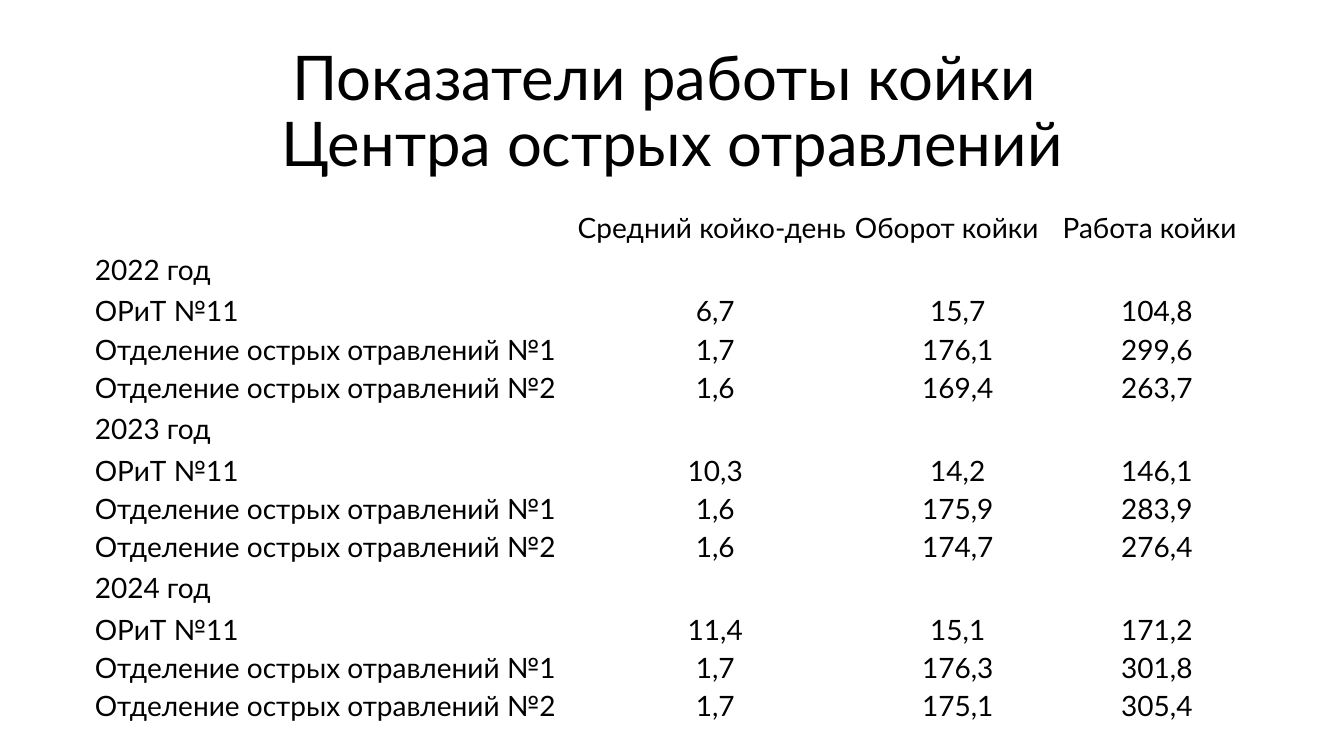
import pptx
import pptx.dml.color
import pptx.enum.text
import pptx.util

Inches = pptx.util.Inches
Pt = pptx.util.Pt
PP_ALIGN = pptx.enum.text.PP_ALIGN
MIDDLE = pptx.enum.text.MSO_ANCHOR.MIDDLE
BLACK = pptx.dml.color.RGBColor(0x00, 0x00, 0x00)
WHITE = pptx.dml.color.RGBColor(0xFF, 0xFF, 0xFF)
FONT = "Lato"

TITLE = "Показатели работы койки \vЦентра острых отравлений"
HEADERS = ["", "Средний койко-день", "Оборот койки", "Работа койки"]
DEPARTMENTS = [
    "ОРиТ №11",
    "Отделение острых отравлений №1",
    "Отделение острых отравлений №2",
]
YEARS = {
    "2022 год": [
        ("6,7", "15,7", "104,8"),
        ("1,7", "176,1", "299,6"),
        ("1,6", "169,4", "263,7"),
    ],
    "2023 год": [
        ("10,3", "14,2", "146,1"),
        ("1,6", "175,9", "283,9"),
        ("1,6", "174,7", "276,4"),
    ],
    "2024 год": [
        ("11,4", "15,1", "171,2"),
        ("1,7", "176,3", "301,8"),
        ("1,7", "175,1", "305,4"),
    ],
}
COLUMN_WIDTHS = [4.79, 2.75, 2.06, 1.89]
HEADER_HEIGHT, YEAR_HEIGHT, DEPARTMENT_HEIGHT = 0.4, 0.44, 0.38
CELL_FORMAT = {
    "margin_left": Inches(0.01),
    "margin_right": Inches(0.01),
    "margin_top": Inches(0.01),
    "margin_bottom": 0,
    "vertical_anchor": MIDDLE,
}
TITLE_FORMAT = {"word_wrap": True, "vertical_anchor": MIDDLE}


def set_attributes(target, values):
    for name, value in values.items():
        setattr(target, name, value)


def write_text(text_frame, text, size, alignment):
    paragraph = text_frame.paragraphs[0]
    paragraph.alignment = alignment
    if not text:
        return
    paragraph.text = text
    for run in paragraph.runs:
        set_attributes(run.font, {"name": FONT, "size": Pt(size)})
        run.font.color.rgb = BLACK


def add_title(slide):
    box = slide.shapes.add_textbox(
        Inches(0.92), Inches(0.4), Inches(11.5), Inches(1.45)
    )
    set_attributes(box.text_frame, TITLE_FORMAT)
    write_text(box.text_frame, TITLE, 44, PP_ALIGN.CENTER)
    box.text_frame.paragraphs[0].line_spacing = 0.9


def table_rows():
    rows = [(HEADER_HEIGHT, HEADERS)]
    for year, results in YEARS.items():
        rows.append((YEAR_HEIGHT, [year, "", "", ""]))
        for department, values in zip(DEPARTMENTS, results):
            rows.append((DEPARTMENT_HEIGHT, [department, *values]))
    return rows


def add_indicators(slide):
    rows = table_rows()
    table = slide.shapes.add_table(
        len(rows),
        len(COLUMN_WIDTHS),
        Inches(0.93),
        Inches(2.05),
        Inches(sum(COLUMN_WIDTHS)),
        Inches(sum(height for height, _ in rows)),
    ).table
    set_attributes(table, {"first_row": False, "horz_banding": False})
    for column, width in zip(table.columns, COLUMN_WIDTHS):
        column.width = Inches(width)
    for row_index, (height, texts) in enumerate(rows):
        table.rows[row_index].height = Inches(height)
        for column_index, text in enumerate(texts):
            cell = table.cell(row_index, column_index)
            set_attributes(cell, CELL_FORMAT)
            cell.fill.solid()
            cell.fill.fore_color.rgb = WHITE
            is_value = row_index > 0 and column_index > 0
            alignment = PP_ALIGN.CENTER if is_value else PP_ALIGN.LEFT
            write_text(cell.text_frame, text, 20, alignment)
        if texts[0] in YEARS:
            table.cell(row_index, 0).merge(table.cell(row_index, len(texts) - 1))


def main():
    presentation = pptx.Presentation()
    presentation.slide_width = Inches(13.33)
    presentation.slide_height = Inches(7.5)
    slide = presentation.slides.add_slide(presentation.slide_layouts[6])
    add_title(slide)
    add_indicators(slide)
    presentation.save("out.pptx")


if __name__ == "__main__":
    main()
